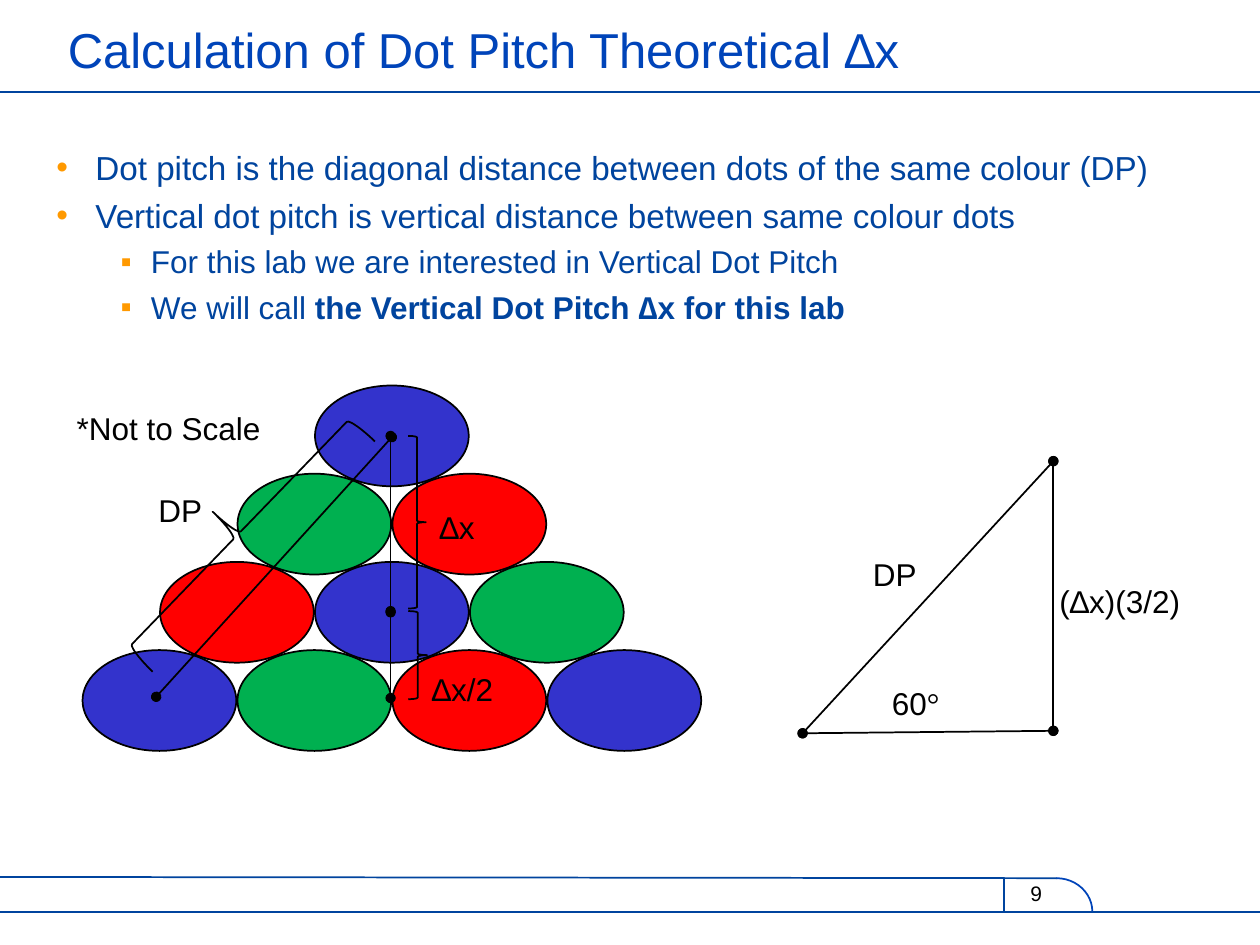
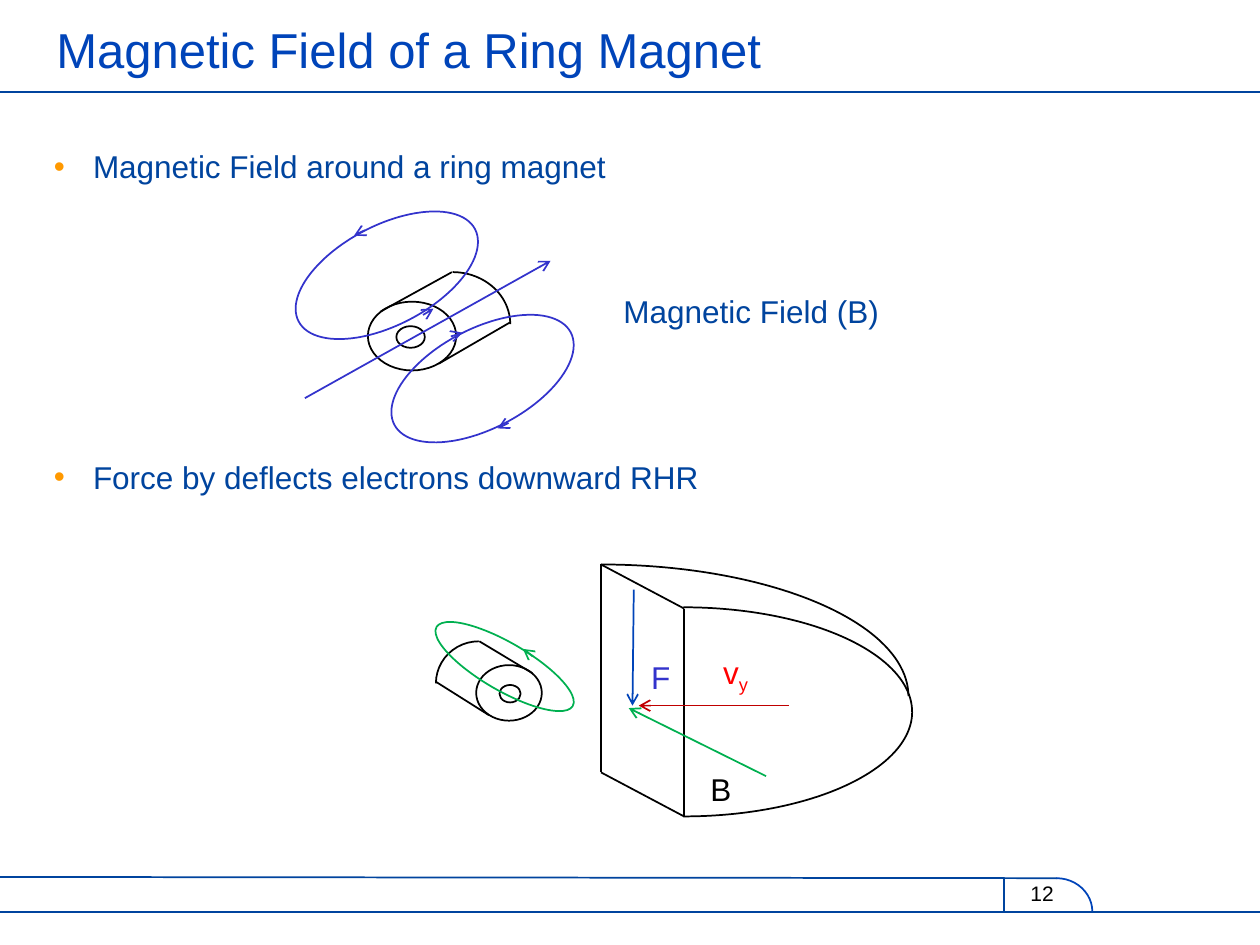
from pptx import Presentation
from pptx.dml.color import RGBColor
from pptx.enum.shapes import MSO_CONNECTOR, MSO_SHAPE
from pptx.enum.text import MSO_ANCHOR
from pptx.oxml.ns import qn
from pptx.util import Inches, Pt
from lxml.etree import SubElement

# The slide is a grid of 10 columns by 7.5 rows of square cells.
COLUMNS, ROWS = 10, 7.5
CELL = Inches(1)

NAVY = RGBColor(0x00, 0x44, 0x9E)
ROYAL = RGBColor(0x00, 0x44, 0xB9)
ORANGE = RGBColor(0xFF, 0x99, 0x00)
BLACK = RGBColor(0x00, 0x00, 0x00)
BLUE = RGBColor(0x33, 0x33, 0xCC)
GREEN = RGBColor(0x00, 0xB0, 0x50)
RED = RGBColor(0xFF, 0x00, 0x00)
DARK_RED = RGBColor(0xC0, 0x00, 0x00)

FONT = "Arial"
DOT_COLOURS = (BLUE, GREEN, RED)
# Arc limits, in the units of the arc's adjustments (54 is a quarter turn)
TOP_RIGHT, BOTTOM_RIGHT, TOP_LEFT = (162, 0), (0, 54), (108, 162)
# Text start and hanging indent in cells, and mark, for each bullet level
BULLETS = ((0.31, 0.31, "•"), (0.75, 0.24, "▪"))


def cells(*values):
    return [round(value * CELL) for value in values]


def add_span(para, text, size=18, colour=BLACK, bold=False, font=FONT):
    span = para.add_run()
    span.text = text
    span.font.name = font
    span.font.size = Pt(size)
    span.font.bold = bold
    span.font.color.rgb = colour
    return span


def add_box(page, left, top, width, height):
    box = page.shapes.add_textbox(*cells(left, top, width, height))
    box.text_frame.word_wrap = True
    return box.text_frame


def add_label(page, text, left, top, width, colour=BLACK, size=18):
    para = add_box(page, left, top, width, 0.4).paragraphs[0]
    add_span(para, text, size, colour)
    return para


def add_bullet(para, level):
    start, hang, mark = BULLETS[level]
    properties = para._p.get_or_add_pPr()
    properties.set("marL", str(cells(start)[0]))
    properties.set("indent", str(cells(-hang)[0]))
    colour = SubElement(properties, qn("a:buClr"))
    SubElement(colour, qn("a:srgbClr"), val=str(ORANGE))
    SubElement(properties, qn("a:buFont"), typeface=FONT)
    SubElement(properties, qn("a:buChar"), char=mark)


def add_body(page, left, width, height, items):
    """Items are (level, size, space before, [(text, bold), ...])."""
    frame = add_box(page, left, 1.12, width, height)
    for index, (level, size, gap, parts) in enumerate(items):
        para = frame.add_paragraph() if index else frame.paragraphs[0]
        add_bullet(para, level)
        if index:
            para.space_before = Pt(gap)
        for text, bold in parts:
            add_span(para, text, size, NAVY, bold)


def add_line(page, start, end, colour=BLACK, head=None, tail=None):
    line = page.shapes.add_connector(
        MSO_CONNECTOR.STRAIGHT, *cells(*start, *end))
    line.line.color.rgb = colour
    line.line.width = Pt(1)
    outline = line.line._get_or_add_ln()
    for tag, kind in (("a:headEnd", head), ("a:tailEnd", tail)):
        if kind:
            SubElement(outline, qn(tag), type=kind)
    SubElement(line._element.spPr, qn("a:effectLst"))


def add_dotted_line(page, start, end):
    add_line(page, start, end, head="oval", tail="oval")


def add_arrow(page, start, end, colour):
    add_line(page, start, end, colour, tail="arrow")


def add_outline(page, kind, area, colour=BLACK, fill=None, turn=0, limits=()):
    shape = page.shapes.add_shape(kind, *cells(*area))
    shape.shadow.inherit = False
    shape.line.color.rgb = colour
    shape.line.width = Pt(1)
    if fill is None:
        shape.fill.background()
    else:
        shape.fill.solid()
        shape.fill.fore_color.rgb = fill
    shape.rotation = turn
    for index, limit in enumerate(limits):
        shape.adjustments[index] = limit


def add_page(deck, title, number, left, width):
    """Blank page with the shared title, rules and numbered footer tab."""
    page = deck.slides.add_slide(deck.slide_layouts[6])
    frame = add_box(page, left, 0, width, 0.77)
    frame.vertical_anchor = MSO_ANCHOR.MIDDLE
    add_span(frame.paragraphs[0], title, 28, ROYAL)
    add_line(page, (0, 0.73), (COLUMNS, 0.73), NAVY)
    add_line(page, (0, 7.24), (COLUMNS, 7.24), NAVY)
    add_line(page, (0, 6.96), (8.39, 6.97), NAVY)
    add_line(page, (7.97, 6.97), (7.97, 7.24), NAVY)
    add_outline(page, MSO_SHAPE.ARC, (8.1, 6.97, 0.57, 0.53), ROYAL,
                limits=TOP_RIGHT)
    add_label(page, number, 8.08, 6.94, 0.5, size=12)
    return page


def add_dot_pyramid(page):
    width, height = 1.22, 0.8
    column_pitch, row_pitch = 1.23, 0.7
    for row in reversed(range(4)):
        for column in range(row + 1):
            left = 2.5 + (column - row / 2) * column_pitch
            top = 3.06 + row * row_pitch
            add_outline(page, MSO_SHAPE.OVAL, (left, top, width, height),
                        fill=DOT_COLOURS[(row + column) % 3])


def add_pitch_marks(page):
    add_dotted_line(page, (1.24, 5.53), (3.11, 3.47))
    add_dotted_line(page, (3.1, 4.85), (3.1, 3.46))
    add_dotted_line(page, (3.1, 5.54), (3.1, 4.86))
    brace = MSO_SHAPE.RIGHT_BRACE
    add_outline(page, brace, (3.24, 3.46, 0.14, 1.37))
    add_outline(page, brace, (3.24, 4.85, 0.15, 0.7))
    add_outline(page, brace, (1.63, 2.96, 0.54, 2.54), turn=224,
                limits=(0.08, 0.49))
    add_label(page, "*Not to Scale", 0.51, 3.2, 1.8)
    add_label(page, "DP", 1.16, 3.85, 0.6)
    add_label(page, "∆x", 3.39, 3.98, 0.6)
    add_label(page, "∆x/2", 3.33, 5.27, 0.8)


def add_triangle(page):
    left_corner, right_corner, peak = (6.37, 5.82), (8.36, 5.8), (8.36, 3.66)
    add_dotted_line(page, left_corner, peak)
    add_dotted_line(page, left_corner, right_corner)
    add_dotted_line(page, right_corner, peak)
    add_label(page, "DP", 6.83, 4.36, 0.6)
    add_label(page, "(∆x)(3/2)", 8.31, 4.57, 1.4)
    angle = add_label(page, "60", 6.98, 5.38, 0.65)
    add_span(angle, "°", font="Times New Roman")


def add_ring_magnet(page, left, top, width, height, mirrored=False):
    """Ring in perspective, laid out in shares of its bounding box."""
    def point(x, y):
        return left + width * (1 - x if mirrored else x), top + height * y

    def area(x, y, wide, high):
        corner = point(x + wide if mirrored else x, y)
        return (*corner, width * wide, height * high)

    add_outline(page, MSO_SHAPE.OVAL, area(0, 0.3, 0.62, 0.7))
    add_outline(page, MSO_SHAPE.OVAL, area(0.2, 0.55, 0.2, 0.22))
    add_line(page, point(0.09, 0.4), point(0.59, 0))
    add_line(page, point(0.5, 0.93), point(1, 0.51))
    add_outline(page, MSO_SHAPE.ARC, area(0.19, 0, 0.81, 1.06),
                limits=TOP_LEFT if mirrored else TOP_RIGHT)


def add_ring_field(page):
    add_ring_magnet(page, 2.92, 2.16, 1.13, 0.78)
    add_arrow(page, (2.42, 3.16), (4.37, 2.07), BLUE)
    for left, top in ((2.28, 1.79), (3.04, 2.61)):
        add_outline(page, MSO_SHAPE.OVAL, (left, top, 1.58, 0.79), BLUE,
                    turn=332.4)
    for start, end in (((2.87, 1.84), (2.81, 1.87)),
                       ((3.39, 2.48), (3.44, 2.45)),
                       ((4.03, 3.36), (3.95, 3.4)),
                       ((3.61, 2.66), (3.67, 2.64))):
        add_arrow(page, start, end, BLUE)
    add_label(page, "Magnetic Field (B)", 4.85, 2.27, 2.4, NAVY)


def add_tube(page):
    back_top, back_bottom = (4.77, 4.48), (4.77, 6.13)
    front_top, front_bottom = (5.43, 4.83), (5.43, 6.48)
    for start, end in ((back_top, front_top), (back_bottom, front_bottom),
                       (back_top, back_bottom), (front_top, front_bottom)):
        add_line(page, start, end)
    front = (3.61, 4.82, 3.63, 1.66)
    add_outline(page, MSO_SHAPE.ARC, (2.33, 4.48, 4.88, 2.09),
                limits=TOP_RIGHT)
    add_outline(page, MSO_SHAPE.ARC, front, limits=TOP_RIGHT)
    add_outline(page, MSO_SHAPE.ARC, front, limits=BOTTOM_RIGHT)


def add_electron_force(page):
    add_tube(page)
    add_arrow(page, (6.26, 5.6), (5.07, 5.6), DARK_RED)
    add_arrow(page, (6.08, 6.16), (4.99, 5.62), GREEN)
    add_arrow(page, (5.03, 4.68), (5.02, 5.6), ROYAL)
    add_label(page, "B", 5.54, 6.06, 0.5)
    add_label(page, "F", 5.07, 5.17, 0.5, BLUE)
    velocity = add_label(page, "v", 5.64, 5.13, 0.55, RED)
    subscript = add_span(velocity, "y", colour=RED)
    subscript._r.get_or_add_rPr().set("baseline", "-25000")
    add_ring_magnet(page, 3.46, 5.09, 0.84, 0.63, mirrored=True)
    add_outline(page, MSO_SHAPE.OVAL, (3.38, 5.1, 1.25, 0.38), GREEN,
                turn=30.1)
    add_arrow(page, (4.23, 5.21), (4.15, 5.15), GREEN)


def add_dot_pitch_page(deck):
    page = add_page(deck, "Calculation of Dot Pitch Theoretical ∆x", "9",
                    0.44, 8.77)
    add_body(page, 0.35, 9.26, 1.75, (
        (0, 19, 0, [("Dot pitch is the diagonal distance between dots of "
                     "the same colour (DP)", False)]),
        (0, 19, 4.4, [("Vertical dot pitch is vertical distance between "
                       "same colour dots", False)]),
        (1, 18, 4.4, [("For this lab we are interested in Vertical Dot "
                       "Pitch", False)]),
        (1, 18, 4.4, [("We will call ", False),
                      ("the Vertical Dot Pitch ∆x for this lab", True)]),
    ))
    add_dot_pyramid(page)
    add_pitch_marks(page)
    add_triangle(page)


def add_ring_magnet_page(deck):
    page = add_page(deck, "Magnetic Field of a Ring Magnet", "12", 0.35, 6.46)
    add_body(page, 0.33, 5.45, 2.9, (
        (0, 18, 0, [("Magnetic Field around a ring magnet", False)]),
        (0, 18, 156, [("Force by deflects electrons downward RHR", False)]),
    ))
    add_ring_field(page)
    add_electron_force(page)


def main():
    deck = Presentation()
    deck.slide_width, deck.slide_height = cells(COLUMNS, ROWS)
    add_dot_pitch_page(deck)
    add_ring_magnet_page(deck)
    deck.save("out.pptx")


if __name__ == "__main__":
    main()
